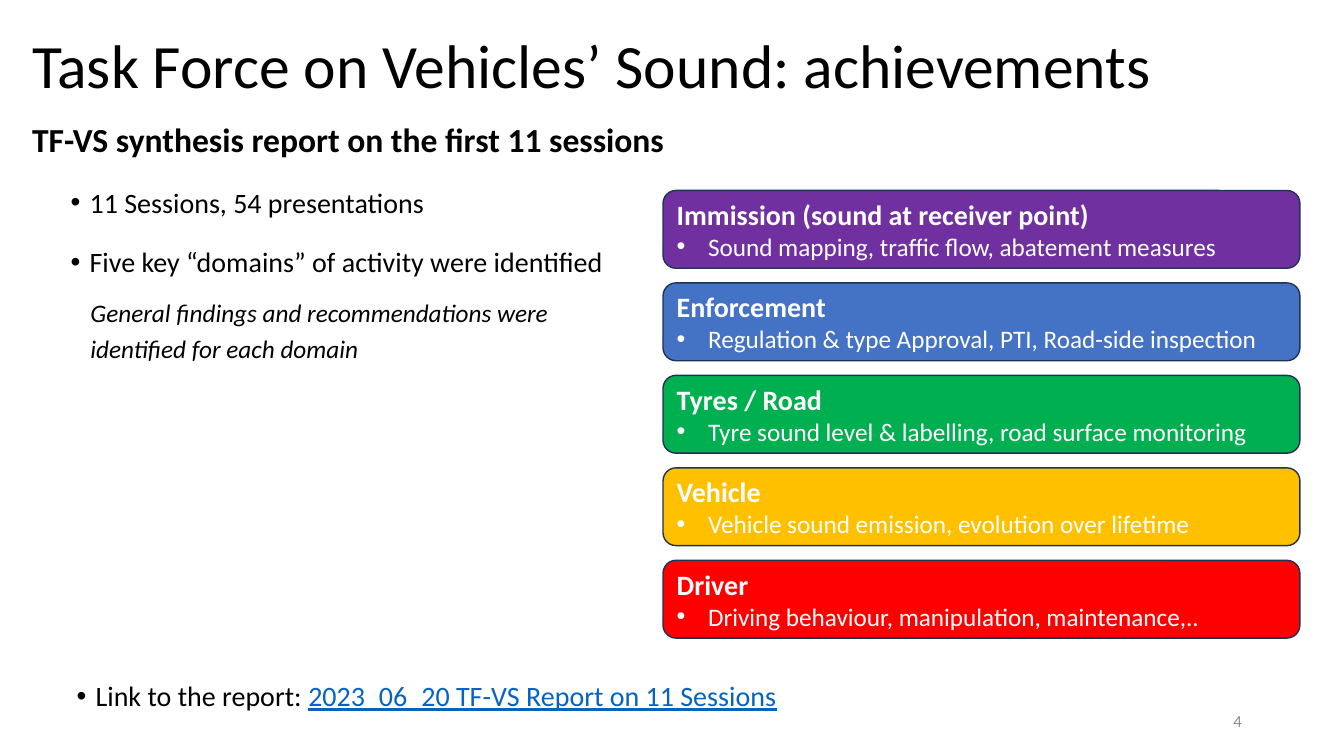
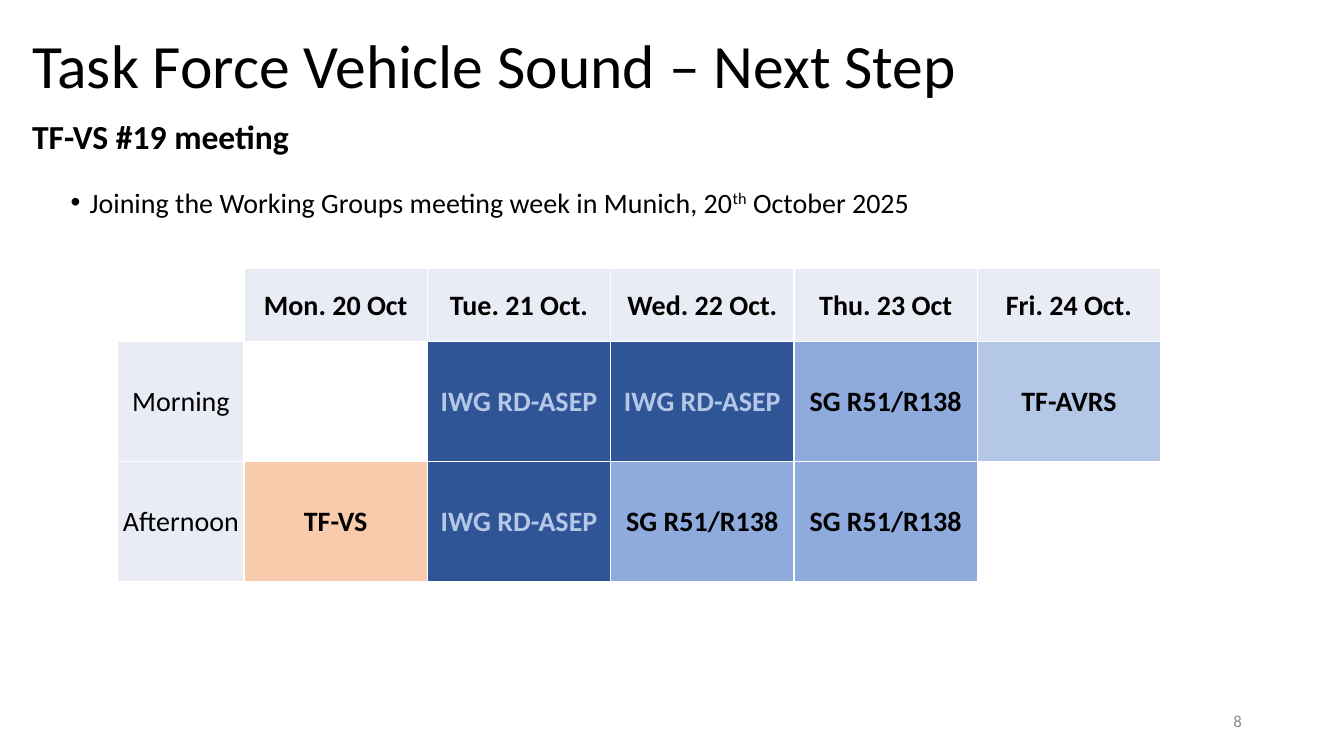
from lxml.etree import SubElement
from pptx import Presentation
from pptx.dml.color import RGBColor
from pptx.enum.shapes import MSO_SHAPE
from pptx.enum.text import MSO_ANCHOR, MSO_AUTO_SIZE, PP_ALIGN
from pptx.oxml.ns import qn
from pptx.util import Cm, Pt

FONT = "Calibri"
BLACK, WHITE, GREY, LINK = "000000", "FFFFFF", "8C8C8C", "0563C1"
OUTLINE = "1E3256"
PALE, NAVY, MID_BLUE, LIGHT_BLUE, PEACH = "E9EBF5", "2F5597", "8FAADC", "B4C7E7", "F8CBAD"

TITLE = {"size": 44}
SUBTITLE = {"size": 24, "bold": True}
BODY = {"size": 20}
NOTE = {"size": 18, "italic": True}
HEADING = {"size": 20, "bold": True, "color": WHITE}
DETAIL = {"size": 18, "color": WHITE}
PAGE = {"size": 12, "color": GREY}

TIGHT = {"line_spacing": 0.9, "alignment": PP_ALIGN.LEFT}
BULLET = {"line_spacing": 1.2, "space_after": Pt(9)}
NEXT_BULLET = {**BULLET, "space_before": Pt(5)}

DOMAINS = [
    ("Immission (sound at receiver point)", "Sound mapping, traffic flow, abatement measures", "7030A0"),
    ("Enforcement", "Regulation & type Approval, PTI, Road-side inspection", "4472C4"),
    ("Tyres / Road", "Tyre sound level & labelling, road surface monitoring", "00B050"),
    ("Vehicle", "Vehicle sound emission, evolution over lifetime", "FFC000"),
    ("Driver", "Driving behaviour, manipulation, maintenance,..", "FF0000"),
]

SCHEDULE = [
    ["", "Mon. 20 Oct", "Tue. 21 Oct.", "Wed. 22 Oct.", "Thu. 23 Oct", "Fri. 24 Oct."],
    ["Morning", "", "IWG RD-ASEP", "IWG RD-ASEP", "SG R51/R138", "TF-AVRS"],
    ["Afternoon", "TF-VS", "IWG RD-ASEP", "SG R51/R138", "SG R51/R138", ""],
]
GROUP_FILLS = {"": WHITE, "IWG RD-ASEP": NAVY, "SG R51/R138": MID_BLUE, "TF-AVRS": LIGHT_BLUE, "TF-VS": PEACH}


def rgb(value):
    """Turn a hex string into a colour."""
    return RGBColor.from_string(value)


def box(left, top, width, height):
    """Convert a rectangle in centimetres to lengths."""
    return [Cm(v) for v in (left, top, width, height)]


def add_run(p, text, style, baseline=None):
    """Append a formatted run."""
    r = p.add_run()
    r.text = text
    values = {"name": FONT, "color": BLACK, "bold": False, **style}
    r.font.size = Pt(values.pop("size"))
    r.font.color.rgb = rgb(values.pop("color"))
    for name, value in values.items():
        setattr(r.font, name, value)
    if baseline:
        r.font._element.set("baseline", str(baseline))


def format_paragraph(p, layout, indent=0, hanging=0):
    """Set spacing and alignment, with a bullet where there is a hanging indent."""
    for name, value in layout.items():
        setattr(p, name, value)
    pPr = p._p.get_or_add_pPr()
    pPr.set("marL", str(Cm(indent)))
    pPr.set("indent", str(-Cm(hanging)))
    if hanging:
        SubElement(pPr, qn("a:buFont")).set("typeface", "Arial")
        SubElement(pPr, qn("a:buChar")).set("char", "•")


def add_bullet(p, text, layout=BULLET):
    """Write a bulleted body paragraph."""
    format_paragraph(p, layout, 0.74, 0.48)
    add_run(p, text, BODY)


def add_text_frame(s, place, anchor=MSO_ANCHOR.TOP):
    """Add a wrapping text box and return its text frame."""
    tf = s.shapes.add_textbox(*box(*place)).text_frame
    tf.word_wrap = True
    tf.vertical_anchor = anchor
    return tf


def add_slide(prs, title, subtitle, subtitle_top, number):
    """Add a slide with its title, subtitle and page number."""
    s = prs.slides.add_slide(prs.slide_layouts[5])
    sp = s.shapes.title
    sp.left, sp.top, sp.width, sp.height = box(0.56, 0.38, 29.92, 2.67)
    tf = sp.text_frame
    tf.auto_size = MSO_AUTO_SIZE.NONE
    tf.vertical_anchor = MSO_ANCHOR.MIDDLE
    format_paragraph(tf.paragraphs[0], TIGHT)
    add_run(tf.paragraphs[0], title, TITLE)
    p = add_text_frame(s, (0.56, subtitle_top, 17.78, 1.52), MSO_ANCHOR.MIDDLE).paragraphs[0]
    format_paragraph(p, TIGHT)
    add_run(p, subtitle, SUBTITLE)
    p = add_text_frame(s, (23.93, 17.65, 7.62, 1.02), MSO_ANCHOR.MIDDLE).paragraphs[0]
    p.alignment = PP_ALIGN.RIGHT
    add_run(p, number, PAGE)
    return s


def add_domain(s, top, heading, detail, fill):
    """Add a rounded box for one domain of activity."""
    sp = s.shapes.add_shape(MSO_SHAPE.ROUNDED_RECTANGLE, *box(16.71, top, 16.05, 1.96))
    sp.shadow.inherit = False
    sp.fill.solid()
    sp.fill.fore_color.rgb = rgb(fill)
    sp.line.color.rgb = rgb(OUTLINE)
    sp.line.width = Pt(1)
    tf = sp.text_frame
    tf.word_wrap = True
    tf.vertical_anchor = MSO_ANCHOR.MIDDLE
    left = {"alignment": PP_ALIGN.LEFT}
    format_paragraph(tf.paragraphs[0], left)
    add_run(tf.paragraphs[0], heading, HEADING)
    p = tf.add_paragraph()
    format_paragraph(p, left, 0.79, 0.79)
    add_run(p, detail, DETAIL)


def format_cell(cell, text, fill, style):
    """Give a cell its borders, fill and centred text."""
    tcPr = cell._tc.get_or_add_tcPr()
    for side in ("lnL", "lnR", "lnT", "lnB"):
        ln = SubElement(tcPr, qn(f"a:{side}"), w=str(Pt(1)))
        SubElement(SubElement(ln, qn("a:solidFill")), qn("a:srgbClr"), val=WHITE)
    cell.fill.solid()
    cell.fill.fore_color.rgb = rgb(fill)
    cell.vertical_anchor = MSO_ANCHOR.MIDDLE
    cell.margin_left = cell.margin_right = cell.margin_top = Cm(0.03)
    cell.margin_bottom = 0
    if text:
        p = cell.text_frame.paragraphs[0]
        p.alignment = PP_ALIGN.CENTER
        add_run(p, text, style)


def add_schedule(s):
    """Add the table of the meeting week."""
    widths, heights = [3.18] + [4.62] * 5, [1.85, 3.02, 3.02]
    place = box(2.97, 6.76, sum(widths), sum(heights))
    table = s.shapes.add_table(len(heights), len(widths), *place).table
    table.first_row = table.horz_banding = False
    for column, width in zip(table.columns, widths):
        column.width = Cm(width)
    for i, (row, height) in enumerate(zip(SCHEDULE, heights)):
        table.rows[i].height = Cm(height)
        for j, text in enumerate(row):
            fill = GROUP_FILLS.get(text, PALE)
            color = LIGHT_BLUE if fill == NAVY else BLACK
            format_cell(table.cell(i, j), text, fill, {"size": 20, "bold": j > 0, "color": color})


def add_achievements(prs):
    """Build the slide on the synthesis report."""
    s = add_slide(prs, "Task Force on Vehicles’ Sound: achievements",
                  "TF-VS synthesis report on the first 11 sessions", 2.82, "4")
    tf = add_text_frame(s, (1.27, 4.37, 14.33, 6.22))
    add_bullet(tf.paragraphs[0], "11 Sessions, 54 presentations")
    add_bullet(tf.add_paragraph(), "Five key “domains” of activity were identified", NEXT_BULLET)
    p = tf.add_paragraph()
    format_paragraph(p, {"line_spacing": 1.2}, 0.76)
    add_run(p, "General findings and recommendations were identified for each domain", NOTE)
    for i, domain in enumerate(DOMAINS):
        add_domain(s, 4.8 + 2.33 * i, *domain)
    p = add_text_frame(s, (1.42, 16.81, 19.02, 1.85)).paragraphs[0]
    add_bullet(p, "Link to the report: ")
    add_run(p, "2023_06_20 TF-VS Report on 11 Sessions", {**BODY, "color": LINK, "underline": True})


def add_next_step(prs):
    """Build the slide on the next meeting."""
    s = add_slide(prs, "Task Force Vehicle Sound – Next Step", "TF-VS #19 meeting", 2.74, "8")
    p = add_text_frame(s, (1.27, 4.37, 23.34, 1.6)).paragraphs[0]
    add_bullet(p, "Joining the Working Groups meeting week in Munich, 20")
    add_run(p, "th", BODY, baseline=30000)
    add_run(p, " October 2025", BODY)
    add_schedule(s)


def main():
    """Build and save the presentation."""
    prs = Presentation()
    prs.slide_width, prs.slide_height = Cm(33.87), Cm(19.05)
    add_achievements(prs)
    add_next_step(prs)
    prs.save("out.pptx")


if __name__ == "__main__":
    main()
